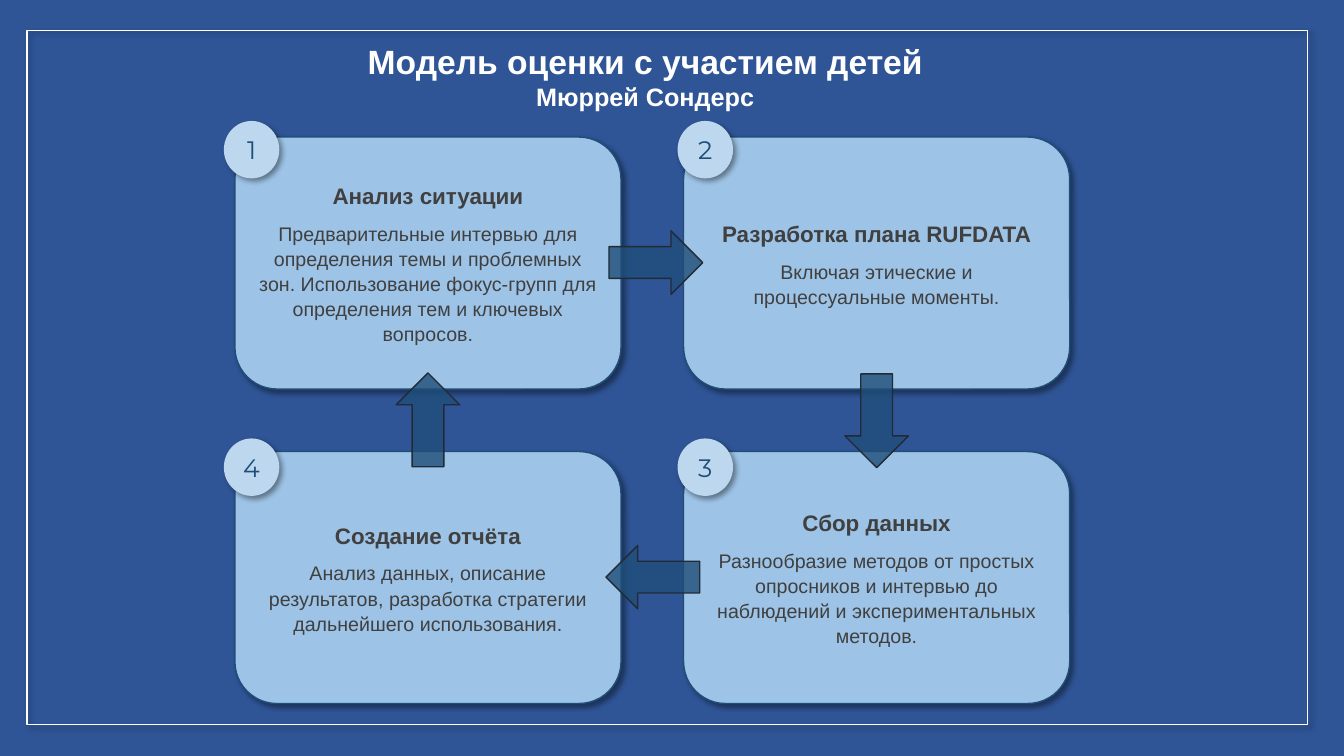
from lxml import etree
from pptx import Presentation
from pptx.dml.color import RGBColor
from pptx.enum import shapes, text
from pptx.oxml import ns
from pptx.util import Inches, Pt

COLORS = {
    "background": "2F5597",
    "card": "9DC3E6",
    "badge": "BDD7EE",
    "navy": "1F4E79",
    "arrow_line": "222A35",
    "body": "404040",
    "white": "FFFFFF",
    "shadow": "000000",
}
KINDS = shapes.MSO_SHAPE

deck = Presentation()
deck.slide_width, deck.slide_height = Inches(13.33), Inches(7.5)
page = deck.slides.add_slide(deck.slide_layouts[6])
page.background.fill.solid()
page.background.fill.fore_color.rgb = RGBColor.from_string(COLORS["background"])


def draw(kind, left, top, width, height, fill=None, line=None, shadow=False, alpha=None):
    """Add a preset shape; alpha is the fill's opacity in percent."""
    shape = page.shapes.add_shape(
        kind, Inches(left), Inches(top), Inches(width), Inches(height))
    shape.shadow.inherit = False
    for paint, color in ((shape.fill, fill), (shape.line.fill, line)):
        if color:
            paint.solid()
            paint.fore_color.rgb = RGBColor.from_string(COLORS[color])
        else:
            paint.background()
    if line:
        shape.line.width = Pt(1)
    properties = shape._element.spPr
    if alpha:
        tint = properties.find(ns.qn("a:solidFill"))[0]
        etree.SubElement(tint, ns.qn("a:alpha"), val=str(alpha * 1000))
    if shadow:
        effects = properties.find(ns.qn("a:effectLst"))
        outer = etree.SubElement(
            effects, ns.qn("a:outerShdw"), blurRad=str(Pt(4)), dist=str(Pt(3)),
            dir=str(45 * 60000), algn="tl", rotWithShape="0")
        shade = etree.SubElement(outer, ns.qn("a:srgbClr"), val=COLORS["shadow"])
        etree.SubElement(shade, ns.qn("a:alpha"), val="40000")
    return shape


def write(box, lines, color, font="Arial", spacing=None, after=None):
    """Fill a box with centred paragraphs given as (words, size, bold)."""
    frame = box.text_frame
    frame.word_wrap = True
    for index, (words, size, bold) in enumerate(lines):
        para = frame.paragraphs[0] if index == 0 else frame.add_paragraph()
        para.alignment = text.PP_ALIGN.CENTER
        if spacing:
            para.line_spacing = spacing
        if after:
            para.space_after = Pt(after)
        span = para.add_run()
        span.text = words
        span.font.name = font
        span.font.size = Pt(size)
        span.font.bold = bold
        span.font.color.rgb = RGBColor.from_string(COLORS[color])


# Steps run clockwise: card left and top, badge left and top, heading, details
steps = [
    (2.33, 1.36, 2.22, 1.2, "Анализ ситуации",
     "Предварительные интервью для определения темы и проблемных зон. "
     "Использование фокус-групп для определения тем и ключевых вопросов."),
    (6.78, 1.36, 6.72, 1.2, "Разработка плана RUFDATA",
     "Включая этические и процессуальные моменты."),
    (6.78, 4.48, 6.72, 4.35, "Сбор данных",
     "Разнообразие методов от простых опросников и интервью до наблюдений "
     "и экспериментальных методов."),
    (2.33, 4.48, 2.22, 4.35, "Создание отчёта",
     "Анализ данных, описание результатов, разработка стратегии "
     "дальнейшего использования."),
]
for left, top, _, _, heading, details in steps:
    card = draw(KINDS.ROUNDED_RECTANGLE, left, top, 3.83, 2.5, "card", "navy", shadow=True)
    card.text_frame.vertical_anchor = text.MSO_ANCHOR.MIDDLE
    write(card, [(heading, 16, True), (details, 14, False)], "body", spacing=1.07, after=8)

arrow_places = [(6.04, 2.29), (8.23, 3.86), (6.01, 5.41), (3.78, 3.85)]
for turn, (left, top) in enumerate(arrow_places):
    arrow = draw(KINDS.RIGHT_ARROW, left, top, 0.93, 0.63, "navy", "arrow_line", alpha=80)
    arrow.rotation = 90 * turn

for number, (_, _, left, top, _, _) in enumerate(steps, start=1):
    badge = draw(KINDS.OVAL, left, top, 0.55, 0.57, "badge", shadow=True)
    frame = badge.text_frame
    frame.margin_left = frame.margin_right = frame.margin_top = frame.margin_bottom = 0
    frame.vertical_anchor = text.MSO_ANCHOR.MIDDLE
    write(badge, [(str(number), 18, False)], "navy", font="Montserrat")

title = page.shapes.add_textbox(Inches(1.62), Inches(0.36), Inches(9.56), Inches(0.81))
write(title, [("Модель оценки с участием детей", 24, True), ("Мюррей Сондерс", 18, True)],
      "white")

draw(KINDS.RECTANGLE, 0.27, 0.3, 12.7, 6.89, line="white", shadow=True)

deck.save("out.pptx")
